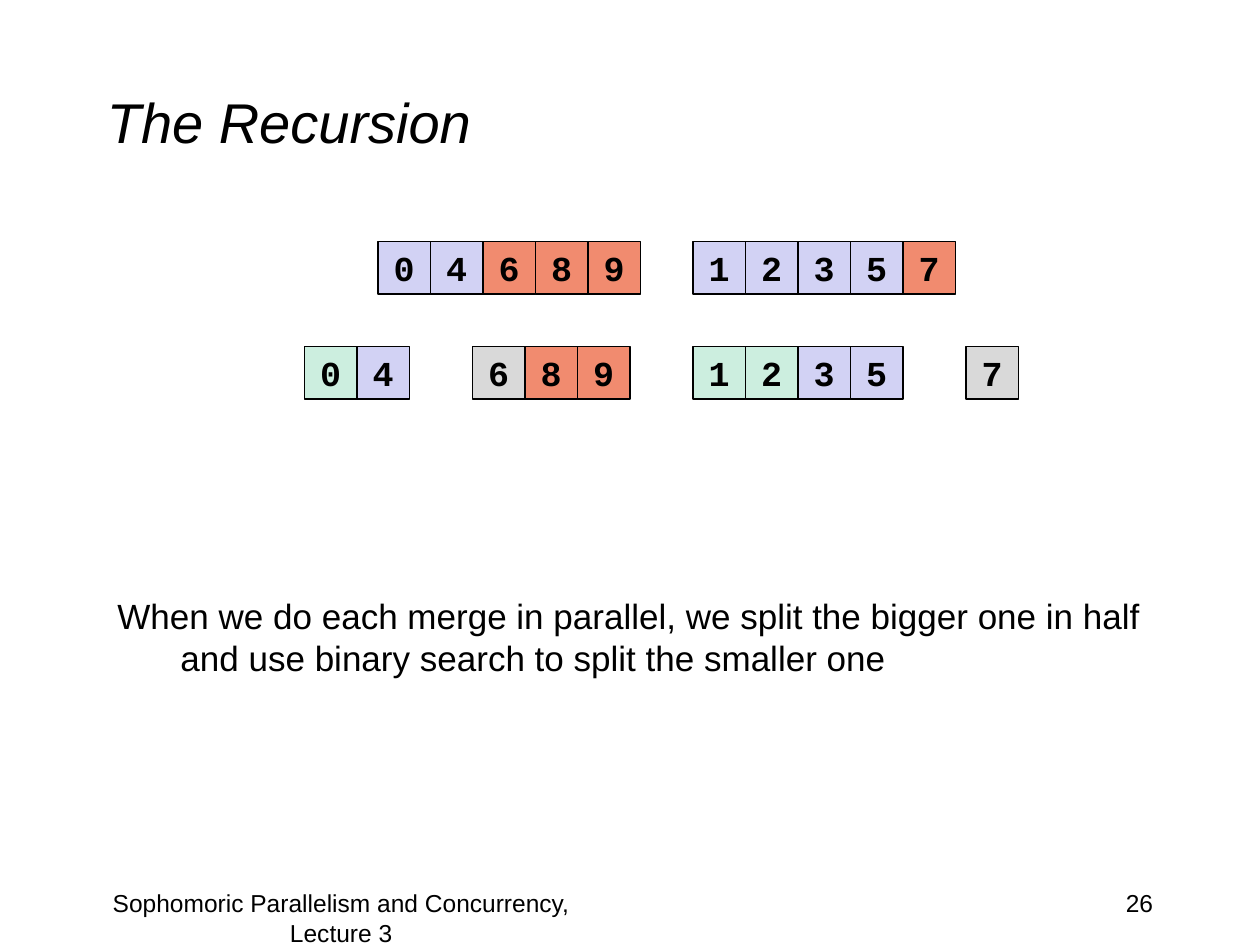
from pptx import Presentation
from pptx.dml.color import RGBColor
from pptx.enum import shapes, text
from pptx.util import Pt

BLUE, RED, GREEN, GRAY = "D2D2F4", "F18B6F", "CCEEDF", "D9D9D9"
BLACK = "000000"
LEFT, MID, RIGHT = text.PP_ALIGN.LEFT, text.PP_ALIGN.CENTER, text.PP_ALIGN.RIGHT

# Content: text, box (left, top, width, height), size, alignment
TITLE = ("The Recursion", (54, 24, 612, 90), 32, LEFT)
BODY = ("When we do each merge in parallel, we split the bigger one in half "
        "and use binary search to split the smaller one",
        (60, 336, 624, 138), 20, LEFT)
PAGE = ("26", (516, 504, 150, 36), 14, RIGHT)
FOOT = ("Sophomoric Parallelism and Concurrency, Lecture 3",
        (36, 504, 318, 36), 14, MID)

# Arrays: left, top, then runs of digits with their fill
CELL = 30
ARRAYS = [
    (216, 138, [("04", BLUE), ("689", RED)]),
    (396, 138, [("1235", BLUE), ("7", RED)]),
    (174, 198, [("0", GREEN), ("4", BLUE)]),
    (270, 198, [("6", GRAY), ("89", RED)]),
    (396, 198, [("12", GREEN), ("35", BLUE)]),
    (552, 198, [("7", GRAY)]),
]


def color(code):
    return RGBColor.from_string(code)


def write(frame, words, size, align, face="Arial"):
    para = frame.paragraphs[0]
    para.text = words
    para.alignment = align
    para.font.name = face
    para.font.size = Pt(size)
    para.font.color.rgb = color(BLACK)
    return para


def add_text(slide, words, box, size, align):
    frame = slide.shapes.add_textbox(*map(Pt, box)).text_frame
    frame.word_wrap = True
    return write(frame, words, size, align)


def add_cell(slide, left, top, digit, fill):
    cell = slide.shapes.add_shape(
        shapes.MSO_SHAPE.RECTANGLE, Pt(left), Pt(top), Pt(CELL), Pt(CELL))
    cell.shadow.inherit = False
    cell.fill.solid()
    cell.fill.fore_color.rgb = color(fill)
    cell.line.color.rgb = color(BLACK)
    cell.line.width = Pt(0.75)
    frame = cell.text_frame
    frame.word_wrap = False
    frame.vertical_anchor = text.MSO_ANCHOR.MIDDLE
    write(frame, digit, 20, MID, "Courier New").font.bold = True


def main():
    deck = Presentation()
    deck.slide_width, deck.slide_height = Pt(720), Pt(540)
    slide = deck.slides.add_slide(deck.slide_layouts[6])

    # Title, page number and footer
    add_text(slide, *TITLE).font.italic = True
    slide.shapes[0].text_frame.vertical_anchor = text.MSO_ANCHOR.MIDDLE
    add_text(slide, *PAGE)
    add_text(slide, *FOOT)

    # Array cells, side by side
    for left, top, runs in ARRAYS:
        cells = [(digit, fill) for digits, fill in runs for digit in digits]
        for i, (digit, fill) in enumerate(cells):
            add_cell(slide, left + i * CELL, top, digit, fill)

    # Body with hanging indent
    para = add_text(slide, *BODY)
    para.space_before = Pt(4)
    props = para._p.get_or_add_pPr()
    props.set("marL", str(Pt(36)))
    props.set("indent", str(Pt(-36)))

    deck.save("out.pptx")


if __name__ == "__main__":
    main()
